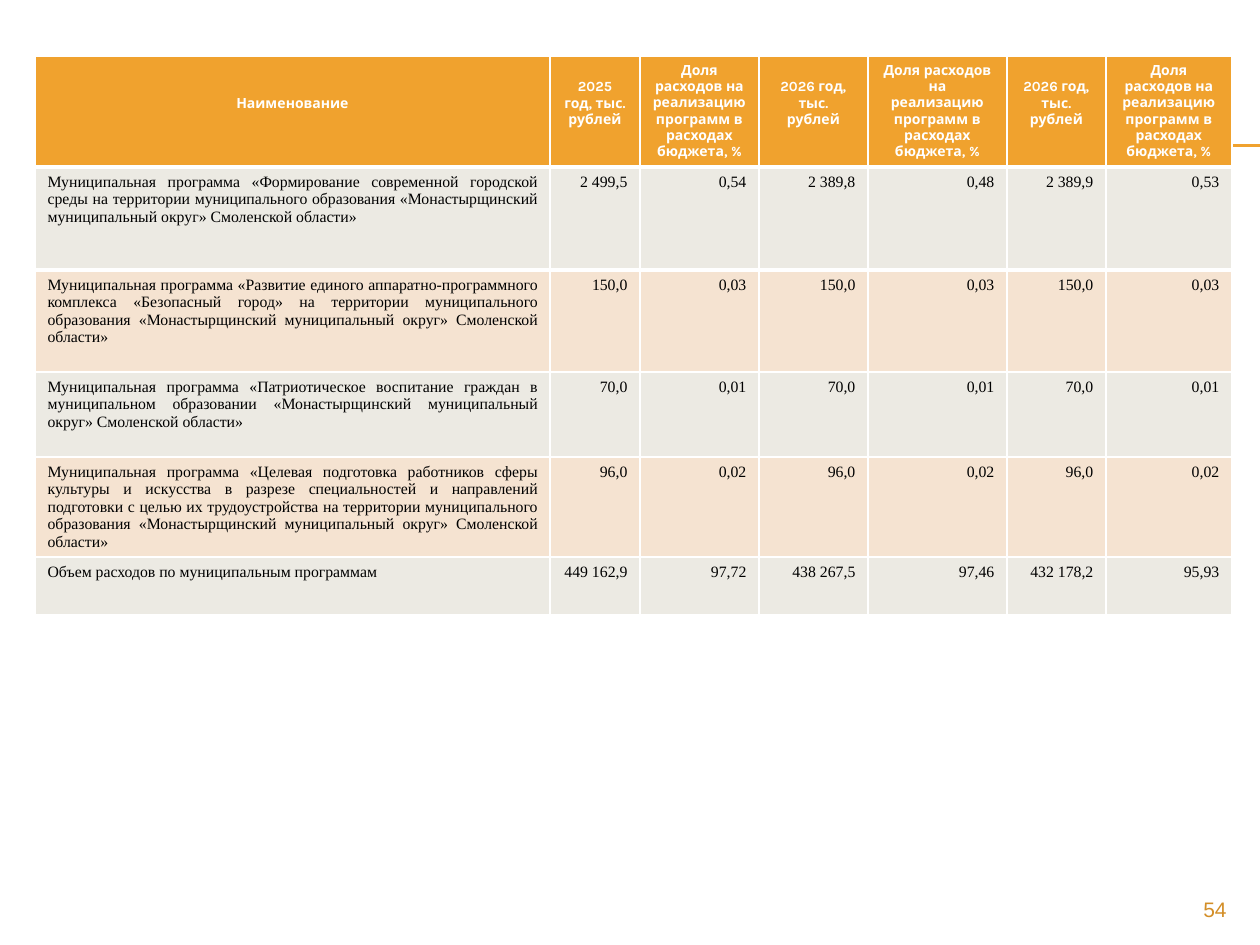
from pptx import Presentation
from pptx.dml.color import RGBColor
from pptx.enum.shapes import MSO_CONNECTOR
from pptx.enum.text import MSO_ANCHOR as ANCHOR, PP_ALIGN as ALIGN
from pptx.oxml.ns import qn
from pptx.util import Emu, Pt
from lxml.etree import SubElement

SCALE = 914400 // 126
ORANGE, WHITE, BLACK = "F0A22E", "FFFFFF", "000000"
BANDS = ("ECEAE3", "F5E3D1")
COLS = (515, 90, 119, 109, 139, 99, 126)
ROWS = (109, 103, 102, 85, 100, 58)
SHARE = "Доля расходов на реализацию программ в расходах бюджета, %"
YEAR_2026 = "2026 год,\nтыс. рублей"
HEADER = ("Наименование", "2025 год, тыс. рублей", SHARE, YEAR_2026, SHARE, YEAR_2026, SHARE)
PROGRAMS = (
    ("Муниципальная программа «Формирование современной городской среды на территории "
     "муниципального образования «Монастырщинский муниципальный округ» Смоленской области»",
     "2 499,5", "0,54", "2 389,8", "0,48", "2 389,9", "0,53"),
    ("Муниципальная программа «Развитие единого аппаратно-программного комплекса "
     "«Безопасный город» на территории муниципального образования «Монастырщинский "
     "муниципальный округ» Смоленской области»",
     "150,0", "0,03", "150,0", "0,03", "150,0", "0,03"),
    ("Муниципальная программа «Патриотическое воспитание граждан в муниципальном "
     "образовании «Монастырщинский муниципальный округ» Смоленской области»",
     "70,0", "0,01", "70,0", "0,01", "70,0", "0,01"),
    ("Муниципальная программа «Целевая подготовка работников сферы культуры и искусства "
     "в разрезе специальностей и направлений подготовки с целью их трудоустройства на "
     "территории муниципального образования «Монастырщинский муниципальный округ» "
     "Смоленской области»",
     "96,0", "0,02", "96,0", "0,02", "96,0", "0,02"),
    ("Объем расходов по муниципальным программам",
     "449 162,9", "97,72", "438 267,5", "97,46", "432 178,2", "95,93"),
)


def px(n):
    """Turn pixels into EMU."""
    return Emu(n * SCALE)


def rgb(color):
    """Turn a hex string into a colour."""
    return RGBColor.from_string(color)


def write(tf, text, font="Times New Roman", size=9, color=BLACK, bold=False, align=ALIGN.RIGHT):
    """Write text into a frame, one paragraph for each line."""
    tf.word_wrap = True
    for i, line in enumerate(text.split("\n")):
        p = tf.add_paragraph() if i else tf.paragraphs[0]
        p.alignment = align
        r = p.add_run()
        r.text = line
        r.font.name, r.font.size, r.font.bold = font, Pt(size), bold
        r.font.color.rgb = rgb(color)


def add_rule(slide, x1, x2, y):
    """Draw a thin horizontal orange line."""
    s = slide.shapes.add_connector(MSO_CONNECTOR.STRAIGHT, px(x1), px(y), px(x2), px(y))
    s.line.color.rgb = rgb(ORANGE)
    s.line.width = Pt(0.75)
    SubElement(s._element.spPr, qn("a:effectLst"))


def style_cell(cell, fill, top, bottom):
    """Give a cell its white borders and its fill."""
    tc_pr = cell._tc.get_or_add_tcPr()
    for side, width in (("L", 1), ("R", 1), ("T", top), ("B", bottom)):
        ln = SubElement(tc_pr, qn(f"a:ln{side}"), w=str(Pt(width)))
        SubElement(SubElement(ln, qn("a:solidFill")), qn("a:srgbClr"), val=WHITE)
    cell.fill.solid()
    cell.fill.fore_color.rgb = rgb(fill)


def fill_header(cell, text):
    """Write a column heading, the shorter ones centred vertically."""
    style_cell(cell, ORANGE, 1, 3)
    if text != SHARE:
        cell.vertical_anchor = ANCHOR.MIDDLE
        cell.margin_bottom = px(22)
    write(cell.text_frame, text, font="Karla", size=8, color=WHITE, bold=True, align=ALIGN.CENTER)


def add_budget_table(slide, x, y):
    """Add the table of programmes with their spending and shares."""
    frame = slide.shapes.add_table(len(ROWS), len(COLS), px(x), px(y), px(sum(COLS)), px(sum(ROWS)))
    table = frame.table
    table.horz_banding = False
    for col, width in zip(table.columns, COLS):
        col.width = px(width)
    for row, height in zip(table.rows, ROWS):
        row.height = px(height)
    for c, text in enumerate(HEADER):
        fill_header(table.cell(0, c), text)
    for r, program in enumerate(PROGRAMS, 1):
        for c, text in enumerate(program):
            cell = table.cell(r, c)
            style_cell(cell, BANDS[(r - 1) % 2], 3 if r < 3 else 1, 3 if r == 1 else 1)
            write(cell.text_frame, text, align=ALIGN.RIGHT if c else ALIGN.JUSTIFY)


def add_page_number(slide, text, x, y, w, h):
    """Add the page number in the lower right corner."""
    tf = slide.shapes.add_textbox(px(x), px(y), px(w), px(h)).text_frame
    tf.vertical_anchor = ANCHOR.MIDDLE
    write(tf, text, font="Arial", size=12, color="D38E27")


def main():
    """Build the slide and save it."""
    prs = Presentation()
    prs.slide_width, prs.slide_height = px(1260), px(945)
    slide = prs.slides.add_slide(prs.slide_layouts[6])
    for y in (145, 146):
        add_rule(slide, 70, 1260, y)
    add_budget_table(slide, 35, 56)
    add_page_number(slide, "54", 1134, 892, 105, 34)
    prs.save("out.pptx")


if __name__ == "__main__":
    main()
